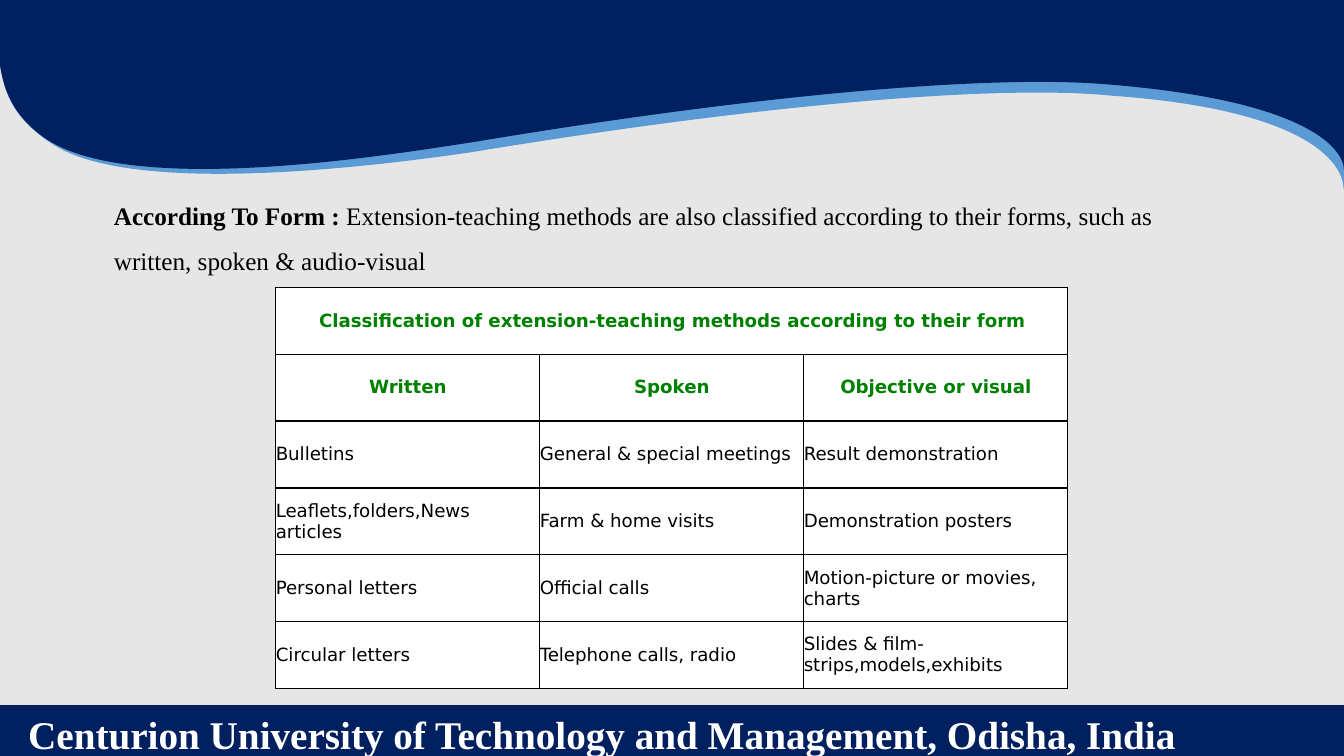
"""Build the slide on extension-teaching methods classified by form."""
from dataclasses import dataclass

from lxml import etree
from pptx import Presentation
from pptx.dml.color import RGBColor
from pptx.enum.shapes import MSO_SHAPE
from pptx.enum.text import MSO_ANCHOR, PP_ALIGN
from pptx.oxml.ns import qn
from pptx.util import Cm, Pt

RECTANGLE = MSO_SHAPE.RECTANGLE
MIDDLE = MSO_ANCHOR.MIDDLE
LEFT, CENTER = PP_ALIGN.LEFT, PP_ALIGN.CENTER
BLANK_LAYOUT = 6


@dataclass(frozen=True)
class Theme:
    """Colours, fonts and type sizes of the slide."""
    background: str = "E7E6E6"
    navy: str = "002060"
    sky: str = "5B9BD5"
    white: str = "FFFFFF"
    black: str = "000000"
    green: str = "008000"
    serif: str = "Times New Roman"
    sans: str = "DejaVu Sans"
    footer_size: int = 28
    body_size: int = 18
    table_size: int = 13
    border_width: int = 1


THEME = Theme()

SKY_WAVE = [
    (0, 0.25),
    (-0.03, 1.68), (-0.13, 2.72), (1.37, 3.66),
    (3.51, 5.0), (9.98, 4.11), (11.86, 3.84),
    (19.25, 2.62), (25.17, 2.13), (27.99, 2.41),
    (34.93, 2.9), (33.68, 5.31), (33.88, 4.67),
]
NAVY_WAVE = [
    (-0.08, 0),
    (-0.08, 1.65), (-0.03, 2.59), (1.02, 3.4),
    (3.12, 5.05), (10.06, 3.86), (11.94, 3.58),
    (19.35, 2.34), (25.12, 1.88), (27.94, 2.13),
    (34.82, 2.69), (33.73, 4.72), (33.88, 4.19),
]

TABLE_TITLE = "Classification of extension-teaching methods according to their form"
FORMS = ["Written", "Spoken", "Objective or visual"]
METHODS = [
    ["Bulletins", "General & special meetings", "Result demonstration"],
    ["Leaflets,folders,News articles", "Farm & home visits", "Demonstration posters"],
    ["Personal letters", "Official calls", "Motion-picture or movies, charts"],
    ["Circular letters", "Telephone calls, radio", "Slides & film-strips,models,exhibits"],
]


def color(value):
    """Turn a hex string into a colour."""
    return RGBColor.from_string(value)


def add_span(para, text, font, size, ink, bold=False):
    """Add one formatted run to a paragraph."""
    span = para.add_run()
    span.text = text
    span.font.name = font
    span.font.size = Pt(size)
    span.font.bold = bold
    span.font.color.rgb = color(ink)


def paint(shape, fill):
    """Give a shape a plain fill without line or shadow."""
    shape.shadow.inherit = False
    shape.fill.solid()
    shape.fill.fore_color.rgb = color(fill)
    shape.line.fill.background()


def bend(wave, nodes):
    """Turn the first straight segments of a wave into cubic curves."""
    segments = list(wave._element.iter(qn("a:lnTo")))
    for first, segment in zip(range(1, len(nodes), 3), segments):
        curve = etree.Element(qn("a:cubicBezTo"))
        for x, y in nodes[first:first + 3]:
            etree.SubElement(curve, qn("a:pt"),
                             x=str(Cm(x) - wave.left), y=str(Cm(y) - wave.top))
        segment.getparent().replace(segment, curve)


def add_wave(page, nodes, fill):
    """Draw a header band with a wavy lower edge."""
    left, top = nodes[0]
    right = nodes[-1][0]
    builder = page.shapes.build_freeform(Cm(left), Cm(top))
    corners = nodes[3::3] + [(right, top)]
    builder.add_line_segments([(Cm(x), Cm(y)) for x, y in corners])
    wave = builder.convert_to_shape()
    bend(wave, nodes)
    paint(wave, fill)


def add_footer(page, text):
    """Draw the footer band with the university name."""
    band = page.shapes.add_shape(RECTANGLE, Cm(-0.05), Cm(17.77), Cm(33.96), Cm(1.45))
    paint(band, THEME.navy)
    frame = band.text_frame
    frame.margin_left = Cm(0.76)
    frame.vertical_anchor = MIDDLE
    para = frame.paragraphs[0]
    para.alignment = LEFT
    add_span(para, text, THEME.serif, THEME.footer_size, THEME.white, True)


def add_intro(page, lead, text):
    """Write the introduction with a bold lead."""
    box = page.shapes.add_textbox(Cm(2.62), Cm(4.53), Cm(28.52), Cm(2.44))
    box.text_frame.word_wrap = True
    para = box.text_frame.paragraphs[0]
    para.line_spacing = 1.5
    add_span(para, lead, THEME.serif, THEME.body_size, THEME.black, True)
    add_span(para, text, THEME.serif, THEME.body_size, THEME.black)


def style_cell(cell):
    """Set the borders, fill and insets of a cell."""
    properties = cell._tc.get_or_add_tcPr()
    for side in ("a:lnL", "a:lnR", "a:lnT", "a:lnB"):
        line = etree.SubElement(properties, qn(side), w=str(Pt(THEME.border_width)))
        fill = etree.SubElement(line, qn("a:solidFill"))
        etree.SubElement(fill, qn("a:srgbClr"), val=THEME.black)
    cell.fill.solid()
    cell.fill.fore_color.rgb = color(THEME.white)
    cell.margin_left = cell.margin_right = cell.margin_top = cell.margin_bottom = 0
    cell.vertical_anchor = MIDDLE


def add_methods_table(page, title, heads, rows):
    """Add the table with a merged title row and a heading row."""
    lines = [[title], heads] + rows
    table = page.shapes.add_table(
        len(lines), len(heads), Cm(6.95), Cm(7.24), Cm(19.96), Cm(10.11)).table
    table.horz_banding = False
    for cell in table.iter_cells():
        style_cell(cell)
    table.cell(0, 0).merge(table.cell(0, len(heads) - 1))
    for row, texts in enumerate(lines):
        is_head = row < 2
        for column, text in enumerate(texts):
            para = table.cell(row, column).text_frame.paragraphs[0]
            para.alignment = CENTER if is_head else LEFT
            ink = THEME.green if is_head else THEME.black
            add_span(para, text, THEME.sans, THEME.table_size, ink, is_head)


def main():
    """Build and save the deck."""
    deck = Presentation()
    deck.slide_width, deck.slide_height = Cm(33.87), Cm(19.05)
    page = deck.slides.add_slide(deck.slide_layouts[BLANK_LAYOUT])
    page.background.fill.solid()
    page.background.fill.fore_color.rgb = color(THEME.background)
    add_wave(page, SKY_WAVE, THEME.sky)
    add_wave(page, NAVY_WAVE, THEME.navy)
    add_footer(page, "Centurion University of Technology and Management, Odisha, India")
    add_intro(
        page, "According To Form : ",
        "Extension-teaching methods are also classified according to their forms, "
        "such as written, spoken & audio-visual")
    add_methods_table(page, TABLE_TITLE, FORMS, METHODS)
    deck.save("out.pptx")


if __name__ == "__main__":
    main()
